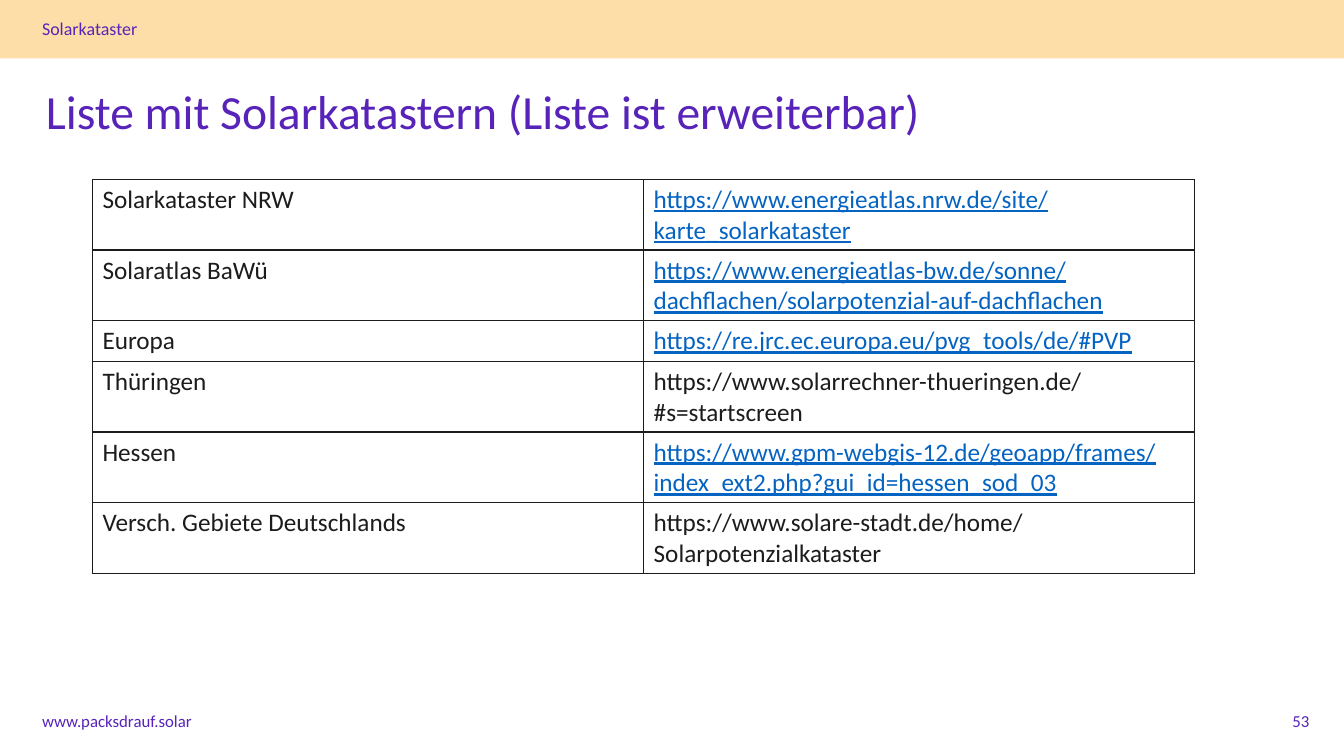
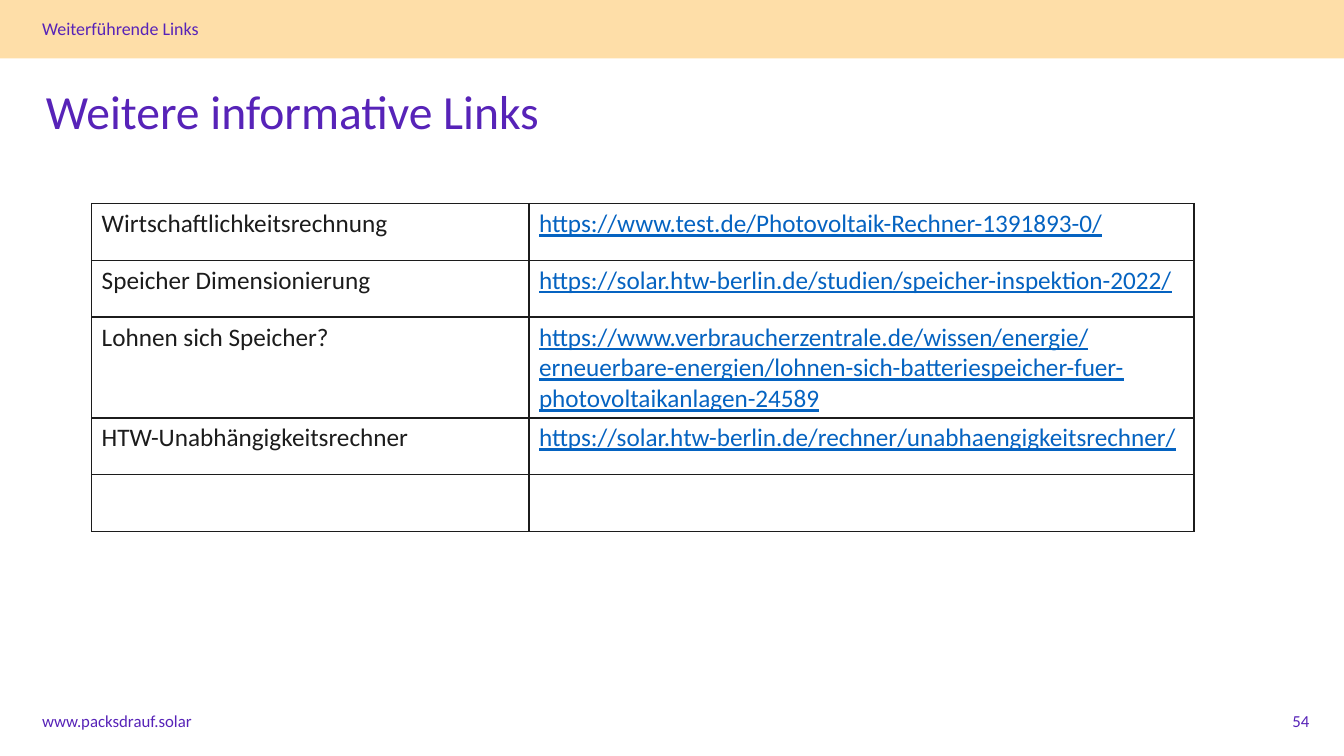
import pptx
import pptx.dml.color
import pptx.enum.shapes
import pptx.enum.text
import pptx.oxml
import pptx.oxml.ns
import pptx.util

Cm = pptx.util.Cm
Pt = pptx.util.Pt
ALIGN = pptx.enum.text.PP_ALIGN
ANCHOR = pptx.enum.text.MSO_ANCHOR

COLORS = {"band": "FEDEA8", "accent": "5723B8", "text": "1C1C1C", "link": "0563C1"}
FONT = "Calibri"
FOOTER = "www.packsdrauf.solar"

# Each row: label, address, whether the address is styled as a link
pages = [
    {
        "number": 53,
        "section": "Solarkataster",
        "title": "Liste mit Solarkatastern (Liste ist erweiterbar)",
        "left": 2.33, "top": 4.52, "columns": [13.89, 13.89], "row_height": 1.03,
        "rows": [
            ("Solarkataster NRW",
             "https://www.energieatlas.nrw.de/site/karte_solarkataster", True),
            ("Solaratlas BaWü",
             "https://www.energieatlas-bw.de/sonne/dachflachen/solarpotenzial-auf-dachflachen", True),
            ("Europa", "https://re.jrc.ec.europa.eu/pvg_tools/de/#PVP", True),
            ("Thüringen", "https://www.solarrechner-thueringen.de/#s=startscreen", False),
            ("Hessen",
             "https://www.gpm-webgis-12.de/geoapp/frames/index_ext2.php?gui_id=hessen_sod_03", True),
            ("Versch. Gebiete Deutschlands",
             "https://www.solare-stadt.de/home/Solarpotenzialkataster", False),
        ],
    },
    {
        "number": 54,
        "section": "Weiterführende Links",
        "title": "Weitere informative Links",
        "left": 2.31, "top": 5.13, "columns": [11.02, 16.76], "row_height": 1.43,
        "rows": [
            ("Wirtschaftlichkeitsrechnung",
             "https://www.test.de/Photovoltaik-Rechner-1391893-0/", True),
            ("Speicher Dimensionierung",
             "https://solar.htw-berlin.de/studien/speicher-inspektion-2022/", True),
            ("Lohnen sich Speicher?",
             "https://www.verbraucherzentrale.de/wissen/energie/erneuerbare-energien/"
             "lohnen-sich-batteriespeicher-fuer-photovoltaikanlagen-24589", True),
            ("HTW-Unabhängigkeitsrechner",
             "https://solar.htw-berlin.de/rechner/unabhaengigkeitsrechner/", True),
            ("", "", False),
        ],
    },
]


def write(frame, text, size=18, color="text", underline=False,
          align=ALIGN.LEFT, anchor=ANCHOR.TOP, spacing=1.0):
    """Fill a text frame with one formatted paragraph."""
    frame.word_wrap = True
    frame.vertical_anchor = anchor
    para = frame.paragraphs[0]
    para.alignment = align
    para.line_spacing = spacing
    para.font.size = Pt(size)
    if text:
        span = para.add_run()
        span.text = text
        span.font.name = FONT
        span.font.size = Pt(size)
        span.font.underline = underline
        span.font.color.rgb = pptx.dml.color.RGBColor.from_string(COLORS[color])


def draw_borders(cell):
    """Give a cell a thin line on all four sides."""
    properties = cell._tc.get_or_add_tcPr()
    for side in ("lnL", "lnR", "lnT", "lnB"):
        properties.append(pptx.oxml.parse_xml(
            f'<a:{side} {pptx.oxml.ns.nsdecls("a")} w="{Pt(1)}"><a:solidFill>'
            f'<a:srgbClr val="{COLORS["text"]}"/></a:solidFill></a:{side}>'))


deck = pptx.Presentation()
deck.slide_width = Cm(33.87)
deck.slide_height = Cm(19.05)

for content in pages:
    page = deck.slides.add_slide(deck.slide_layouts[6])

    # Top band
    band = page.shapes.add_shape(
        pptx.enum.shapes.MSO_SHAPE.RECTANGLE, 0, 0, deck.slide_width, Cm(1.47))
    band.shadow.inherit = False
    band.fill.solid()
    band.fill.fore_color.rgb = pptx.dml.color.RGBColor.from_string(COLORS["band"])
    band.line.fill.background()

    # Section name, title and footer
    middle = {"anchor": ANCHOR.MIDDLE}
    for text, place, style in [
        (content["section"], (0.81, 0.46, 16.13, 0.69), {"size": 12.8, "spacing": 0.7}),
        (content["title"], (0.91, 1.98, 29.21, 1.8), {"size": 34, "spacing": 0.9, **middle}),
        (FOOTER, (0.81, 17.65, 7.62, 1.02), {"size": 12, **middle}),
        (str(content["number"]), (25.63, 17.65, 7.62, 1.02),
         {"size": 12, "align": ALIGN.RIGHT, **middle}),
    ]:
        box = page.shapes.add_textbox(*[Cm(length) for length in place])
        write(box.text_frame, text, color="accent", **style)

    # Table of links
    rows, columns = content["rows"], content["columns"]
    table = page.shapes.add_table(
        len(rows), len(columns), Cm(content["left"]), Cm(content["top"]),
        Cm(sum(columns)), Cm(content["row_height"] * len(rows))).table
    table.first_row = False
    table.horz_banding = False
    for column, width in zip(table.columns, columns):
        column.width = Cm(width)
    for row, (label, address, is_link) in zip(table.rows, rows):
        row.height = Cm(content["row_height"])
        label_cell, address_cell = row.cells
        write(label_cell.text_frame, label)
        write(address_cell.text_frame, address,
              color="link" if is_link else "text", underline=is_link)
        for cell in (label_cell, address_cell):
            draw_borders(cell)
            cell.fill.background()

deck.save("out.pptx")
